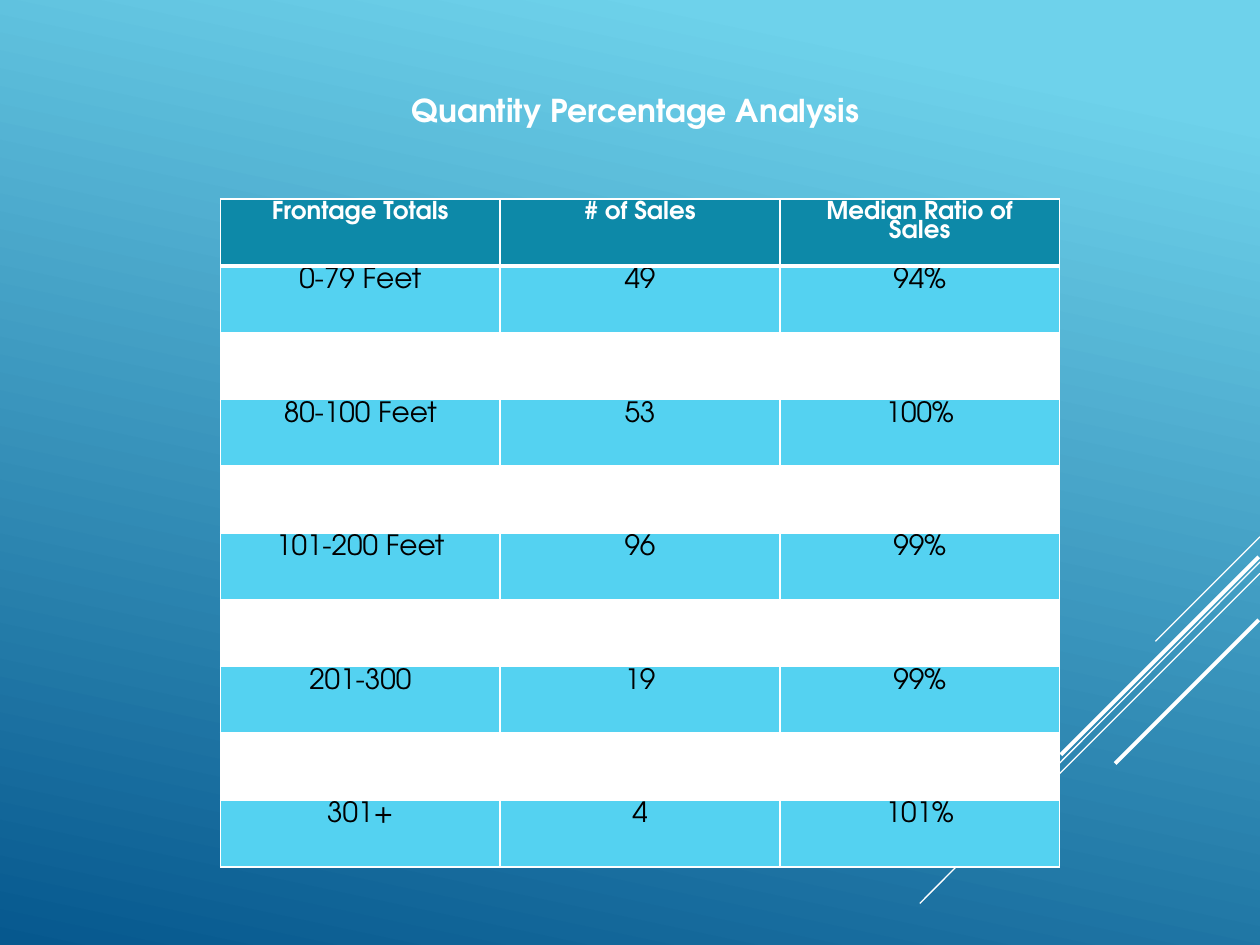
from pptx import Presentation
from pptx.dml.color import RGBColor
from pptx.enum.text import MSO_AUTO_SIZE, PP_ALIGN
from pptx.oxml import parse_xml
from pptx.oxml.ns import nsdecls
from pptx.enum.shapes import MSO_CONNECTOR
from pptx.util import Inches, Pt

FONT = "TeX Gyre Adventor"
WHITE = RGBColor(0xFF, 0xFF, 0xFF)
BLACK = RGBColor(0x00, 0x00, 0x00)
SKY = RGBColor(0x6E, 0xD2, 0xEB)
NAVY = RGBColor(0x06, 0x58, 0x8E)
TEAL = RGBColor(0x0D, 0x89, 0xA8)
CYAN = RGBColor(0x54, 0xD2, 0xF1)

SLIDE_WIDTH, SLIDE_HEIGHT = Inches(10), Inches(7.5)
TABLE_LEFT, TABLE_TOP = Inches(1.75), Inches(1.58)
COLUMN_WIDTH, ROW_HEIGHT = Inches(2.22), Inches(0.53)

HEADINGS = ("Frontage Totals", "# of Sales", "Median Ratio of Sales")
SALES = (
    ("0-79 Feet", "49", "94%"),
    ("80-100 Feet", "53", "100%"),
    ("101-200 Feet", "96", "99%"),
    ("201-300", "19", "99%"),
    ("301+", "4", "101%"),
)
# Right end, left end (inches) and width (points) of each corner stripe
STRIPES = (
    ((10, 4.26), (9.17, 5.09), 0.75),
    ((10, 4.46), (7.3, 7.17), 0.75),
    ((10, 4.55), (8.28, 6.27), 0.75),
    ((9.99, 4.42), (8.42, 5.99), 2.25),
    ((9.99, 4.92), (8.85, 6.06), 2.25),
)


def paint_background(slide):
    fill = slide.background.fill
    fill.gradient()
    fill.gradient_angle = 360 - 102
    for stop, position, color in zip(fill.gradient_stops, (0.1, 1), (SKY, NAVY)):
        stop.position = position
        stop.color.rgb = color


def add_stripe(slide, start, end, width):
    points = [Inches(length) for length in start + end]
    stripe = slide.shapes.add_connector(MSO_CONNECTOR.STRAIGHT, *points)
    stripe.line.color.rgb = WHITE
    stripe.line.width = Pt(width)
    stripe._element.spPr.append(parse_xml(f"<a:effectLst {nsdecls('a')}/>"))


def style_paragraph(paragraph, size, color, bold):
    paragraph.alignment = PP_ALIGN.CENTER
    font = paragraph.font
    font.name, font.size, font.bold = FONT, Pt(size), bold
    font.color.rgb = color


def add_title(slide, text):
    box = slide.shapes.add_textbox(Inches(3.17), Inches(0.67), Inches(3.75), Inches(0.4))
    frame = box.text_frame
    frame.word_wrap = True
    frame.auto_size = MSO_AUTO_SIZE.SHAPE_TO_FIT_TEXT
    frame.text = text
    style_paragraph(frame.paragraphs[0], 18, WHITE, True)


def set_borders(cell, top=1, bottom=1):
    """Draw white borders, with widths in points."""
    properties = cell._tc.get_or_add_tcPr()
    for side, width in (("L", 1), ("R", 1), ("T", top), ("B", bottom)):
        properties.append(parse_xml(
            f'<a:ln{side} {nsdecls("a")} w="{Pt(width)}"><a:solidFill>'
            f'<a:srgbClr val="{WHITE}"/></a:solidFill></a:ln{side}>'))


def fill_cell(cell, text, fill, size, color, bold):
    cell.fill.solid()
    cell.fill.fore_color.rgb = fill
    cell.text = text
    paragraph = cell.text_frame.paragraphs[0]
    paragraph.line_spacing = 0.8
    style_paragraph(paragraph, size, color, bold)


def add_sales_table(slide):
    """Place the headings, then the sales rows with a white row between them."""
    row_count, column_count = 2 * len(SALES), len(HEADINGS)
    table = slide.shapes.add_table(
        row_count, column_count, TABLE_LEFT, TABLE_TOP,
        COLUMN_WIDTH * column_count, ROW_HEIGHT * row_count).table
    for column in table.columns:
        column.width = COLUMN_WIDTH
    for row_index, row in enumerate(table.rows):
        row.height = ROW_HEIGHT
        for column_index, cell in enumerate(row.cells):
            set_borders(cell, top=3 if row_index == 1 else 1,
                        bottom=3 if row_index == 0 else 1)
            if row_index == 0:
                fill_cell(cell, HEADINGS[column_index], TEAL, 14, WHITE, True)
            elif row_index % 2:
                text = SALES[row_index // 2][column_index]
                fill_cell(cell, text, CYAN, 16, BLACK, False)
            else:
                fill_cell(cell, "", WHITE, 16, BLACK, False)


def main():
    presentation = Presentation()
    presentation.slide_width, presentation.slide_height = SLIDE_WIDTH, SLIDE_HEIGHT
    slide = presentation.slides.add_slide(presentation.slide_layouts[6])
    paint_background(slide)
    for start, end, width in STRIPES:
        add_stripe(slide, start, end, width)
    add_title(slide, "Quantity Percentage Analysis")
    add_sales_table(slide)
    presentation.save("out.pptx")


if __name__ == "__main__":
    main()
